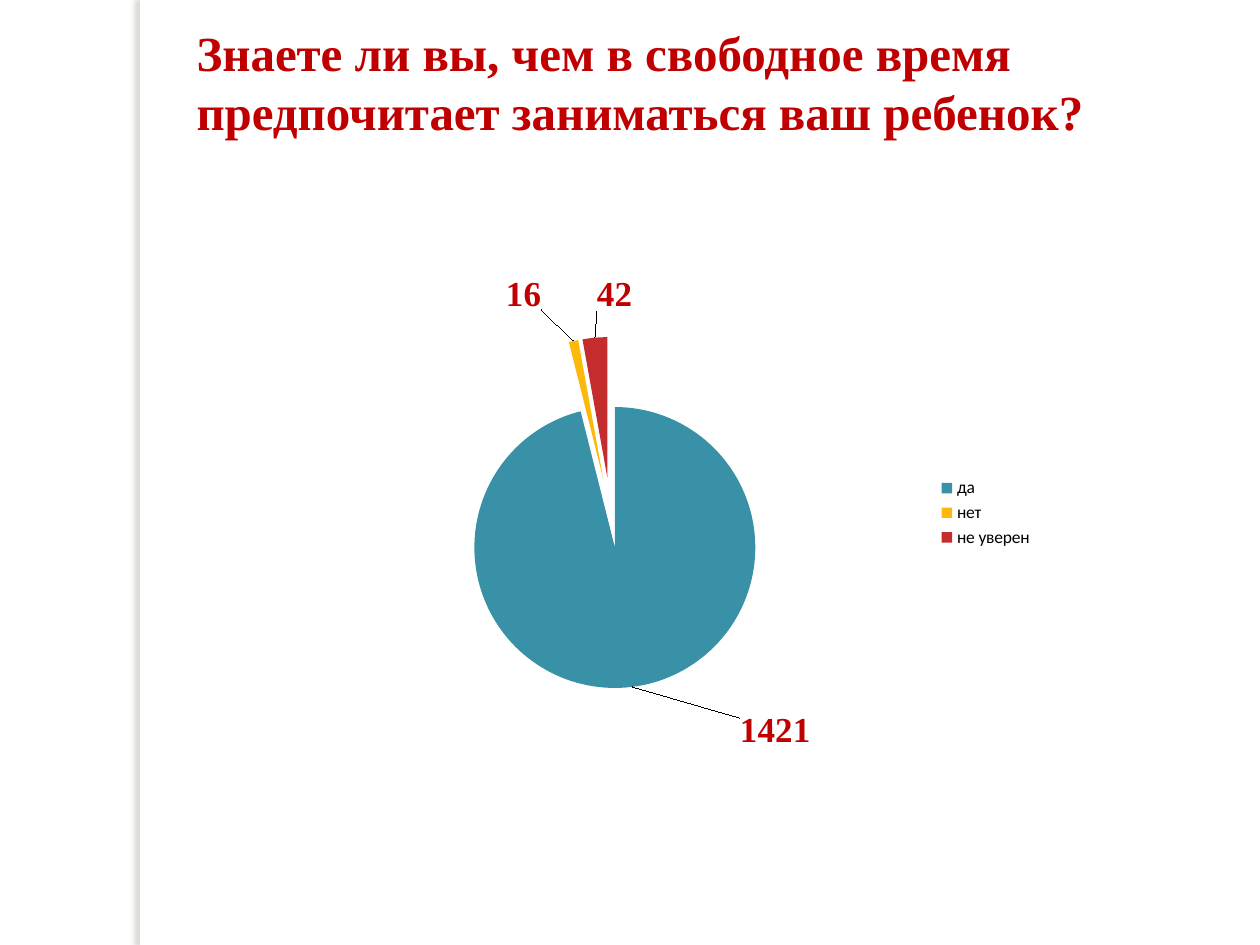
from lxml.etree import SubElement
from pptx import Presentation
from pptx.chart.data import CategoryChartData
from pptx.dml.color import RGBColor
from pptx.enum.chart import XL_CHART_TYPE, XL_LABEL_POSITION, XL_LEGEND_POSITION
from pptx.enum.shapes import MSO_SHAPE
from pptx.enum.text import MSO_ANCHOR, PP_ALIGN
from pptx.oxml import parse_xml
from pptx.oxml.ns import nsdecls, qn
from pptx.util import Inches, Pt

WHITE = RGBColor(0xFF, 0xFF, 0xFF)
BLACK = RGBColor(0x00, 0x00, 0x00)
DARK_RED = RGBColor(0xC0, 0x00, 0x00)
SHADOW = RGBColor(0x73, 0x6F, 0x63)
TEAL = RGBColor(0x38, 0x91, 0xA7)
AMBER = RGBColor(0xFE, 0xB8, 0x0A)
RED = RGBColor(0xC3, 0x2D, 0x2E)

TITLE = "Знаете ли вы, чем в свободное время предпочитает заниматься ваш ребенок?"
ANSWERS = [
    ("да", 1421, TEAL, (0.14, 0.05)),
    ("нет", 16, AMBER, (-0.04, -0.05)),
    ("не уверен", 42, RED, (0.05, -0.04)),
]
SERIF_BOLD = {"name": "Times New Roman", "bold": True}


def format_font(font, color, **values):
    """Apply font values and a colour."""
    for name, value in values.items():
        setattr(font, name, value)
    font.color.rgb = color


def add_side_bar(slide):
    """Add the white vertical bar that casts a shadow to the left."""
    bar = slide.shapes.add_shape(
        MSO_SHAPE.RECTANGLE, Inches(1.11), 0, Inches(0.08), Inches(7.5)
    )
    bar.fill.solid()
    bar.fill.fore_color.rgb = WHITE
    bar.line.fill.background()
    bar.shadow.inherit = False
    effects = bar._element.spPr.find(qn("a:effectLst"))
    effects.append(parse_xml(
        f'<a:outerShdw {nsdecls("a")} blurRad="{Pt(3)}" dist="{Pt(3)}" dir="10800000" '
        f'algn="tl" rotWithShape="0"><a:srgbClr val="{SHADOW}">'
        '<a:alpha val="25000"/></a:srgbClr></a:outerShdw>'
    ))


def format_title(title):
    """Place the title and set its text."""
    box = {"left": 1.46, "top": 0.13, "width": 7.48, "height": 1.04}
    for name, value in box.items():
        setattr(title, name, Inches(value))
    frame = title.text_frame
    frame.text = TITLE
    frame.word_wrap = True
    frame.vertical_anchor = MSO_ANCHOR.TOP
    paragraph = frame.paragraphs[0]
    paragraph.alignment = PP_ALIGN.LEFT
    format_font(paragraph.runs[0].font, DARK_RED, size=Pt(28), **SERIF_BOLD)


def make_layout(**values):
    """Return a manual chart layout."""
    layout = parse_xml(f'<c:layout {nsdecls("c")}><c:manualLayout/></c:layout>')
    for name, value in values.items():
        SubElement(layout[0], qn(f"c:{name}")).set("val", str(value))
    return layout


def format_slice(point, color, offset):
    """Colour one slice, pull it out and shift its value label."""
    point.format.fill.solid()
    point.format.fill.fore_color.rgb = color
    label = point.data_label
    format_font(label.font, DARK_RED, size=Pt(20), **SERIF_BOLD)
    label.position = XL_LABEL_POSITION.OUTSIDE_END
    element = label._dLbl
    element.find(qn("c:idx")).addnext(make_layout(x=offset[0], y=offset[1]))
    shown = {"showVal": "1", "showCatName": "0", "showSerName": "0",
             "showPercent": "0", "showLegendKey": "0"}
    for name, value in shown.items():
        element.find(qn(f"c:{name}")).set("val", value)


def add_answer_chart(slide):
    """Add the exploded pie of answers."""
    data = CategoryChartData()
    data.categories = [answer[0] for answer in ANSWERS]
    data.add_series("Series 1", [answer[1] for answer in ANSWERS])
    chart = slide.shapes.add_chart(
        XL_CHART_TYPE.PIE_EXPLODED, Inches(2.24), Inches(2.18), Inches(6.06), Inches(3.78), data
    ).chart
    format_font(chart.font, BLACK, size=Pt(10), name="Calibri")
    chart.has_title = False
    chart.has_legend = True
    chart.legend.position = XL_LEGEND_POSITION.RIGHT
    chart.legend.include_in_layout = False
    plot = chart.plots[0]
    plot.vary_by_categories = True
    series = plot.series[0]
    for index, (_, _, color, offset) in enumerate(ANSWERS):
        format_slice(series.points[index], color, offset)
    labels = series.data_labels
    labels.show_value = True
    labels.show_percentage = False
    format_font(labels.font, DARK_RED, size=Pt(20), **SERIF_BOLD)
    leader_lines = labels._element.find(qn("c:showLeaderLines"))
    if leader_lines is None:
        leader_lines = SubElement(labels._element, qn("c:showLeaderLines"))
    leader_lines.set("val", "1")
    series._element.find(qn("c:explosion")).set("val", "25")
    area = chart._chartSpace.chart.plotArea
    for layout in area.findall(qn("c:layout")):
        area.remove(layout)
    area.insert(0, make_layout(
        layoutTarget="inner", xMode="edge", yMode="edge", x=0.2, y=0.13, w=0.46, h=0.74
    ))


def main():
    """Build and save the slide."""
    presentation = Presentation()
    presentation.slide_width = Inches(10)
    presentation.slide_height = Inches(7.5)
    slide = presentation.slides.add_slide(presentation.slide_layouts[5])
    slide.background.fill.solid()
    slide.background.fill.fore_color.rgb = WHITE
    add_side_bar(slide)
    format_title(slide.shapes.title)
    add_answer_chart(slide)
    presentation.save("out.pptx")


if __name__ == "__main__":
    main()
